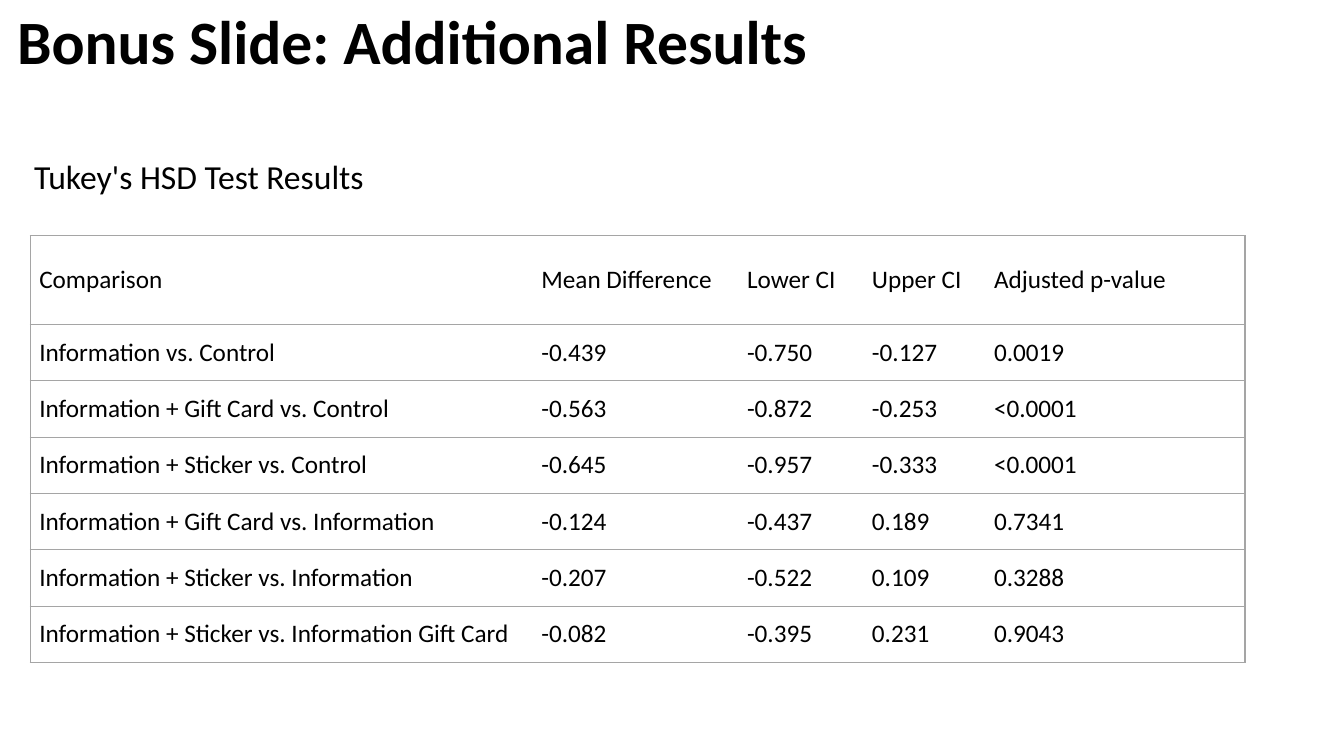
from lxml.etree import SubElement as Sub
from pptx import Presentation
from pptx.dml.color import RGBColor as Rgb
from pptx.enum.text import MSO_ANCHOR as Anchor, PP_ALIGN as Align
from pptx.oxml.ns import qn
from pptx.util import Inches, Pt

HEAD = ["Comparison", "Mean Difference", "Lower CI", "Upper CI", "Adjusted p-value"]
TESTS = [
    ["Information vs. Control", "-0.439", "-0.750", "-0.127", "0.0019"],
    ["Information + Gift Card vs. Control", "-0.563", "-0.872", "-0.253", "<0.0001"],
    ["Information + Sticker vs. Control", "-0.645", "-0.957", "-0.333", "<0.0001"],
    ["Information + Gift Card vs. Information", "-0.124", "-0.437", "0.189", "0.7341"],
    ["Information + Sticker vs. Information", "-0.207", "-0.522", "0.109", "0.3288"],
    ["Information + Sticker vs. Information Gift Card", "-0.082", "-0.395", "0.231", "0.9043"],
]


def tint(code):
    return Rgb.from_string(code)


def write(frame, text, size=18, bold=False, align=Align.LEFT, space=1.0,
          font="Calibri", color="000000"):
    line = frame.paragraphs[0]
    line.alignment = align
    line.line_spacing = space
    run = line.add_run()
    run.text = text
    run.font.name = font
    run.font.size = Pt(size)
    run.font.bold = bold
    run.font.color.rgb = tint(color)


class Board:
    paper = "FFFFFF"
    rule = "A5A5A5"

    def __init__(self, deck):
        self.wide = deck.slide_width / 100
        self.high = deck.slide_height / 100
        self.slide = deck.slides.add_slide(deck.slide_layouts[6])

    def x(self, share):
        return round(share * self.wide)

    def y(self, share):
        return round(share * self.high)

    def area(self, left, top, width, height):
        return self.x(left), self.y(top), self.x(width), self.y(height)

    def text(self, area, text, anchor=Anchor.TOP, wrap=True, **style):
        frame = self.slide.shapes.add_textbox(*self.area(*area)).text_frame
        frame.word_wrap = wrap
        frame.vertical_anchor = anchor
        write(frame, text, **style)

    def edge(self, cell, side, shown):
        line = Sub(cell._tc.get_or_add_tcPr(), qn(f"a:ln{side}"), w=str(Pt(1)))
        if shown:
            fill = Sub(line, qn("a:solidFill"))
            Sub(fill, qn("a:srgbClr"), val=self.rule)
        else:
            Sub(line, qn("a:noFill"))

    def cell(self, cell, text, sides):
        for side in "LRTB":
            self.edge(cell, side, side in sides)
        cell.fill.solid()
        cell.fill.fore_color.rgb = tint(self.paper)
        cell.vertical_anchor = Anchor.MIDDLE
        cell.margin_left = cell.margin_right = Inches(0.09)
        cell.margin_top = cell.margin_bottom = Inches(0.04)
        write(cell.text_frame, text, align=Align.JUSTIFY)

    def table(self, left, top, cols, rows, data):
        area = self.area(left, top, sum(cols), sum(rows))
        grid = self.slide.shapes.add_table(len(rows), len(cols), *area).table
        grid.horz_banding = False
        for col, width in zip(grid.columns, cols):
            col.width = self.x(width)
        for row, height in zip(grid.rows, rows):
            row.height = self.y(height)
        last = len(cols) - 1
        for r, texts in enumerate(data):
            for c, text in enumerate(texts):
                sides = "TB" + "L" * (c == 0) + "R" * (c == last)
                self.cell(grid.cell(r, c), text, sides)


def main():
    deck = Presentation()
    deck.slide_width = Inches(13.33)
    deck.slide_height = Inches(7.5)
    board = Board(deck)
    board.text((0.53, -3.73, 86.27, 19.33), "Bonus Slide: Additional Results",
               anchor=Anchor.MIDDLE, size=44, bold=True, space=0.9)
    board.table(2.25, 31.2, [37.36, 15.3, 9.3, 9.08, 19.35],
                [11.73] + [7.45] * len(TESTS), [HEAD] + TESTS)
    board.text((1.8, 20, 26.86, 6.67), "Tukey's HSD Test Results",
               wrap=False, size=24)
    deck.save("out.pptx")


if __name__ == "__main__":
    main()
